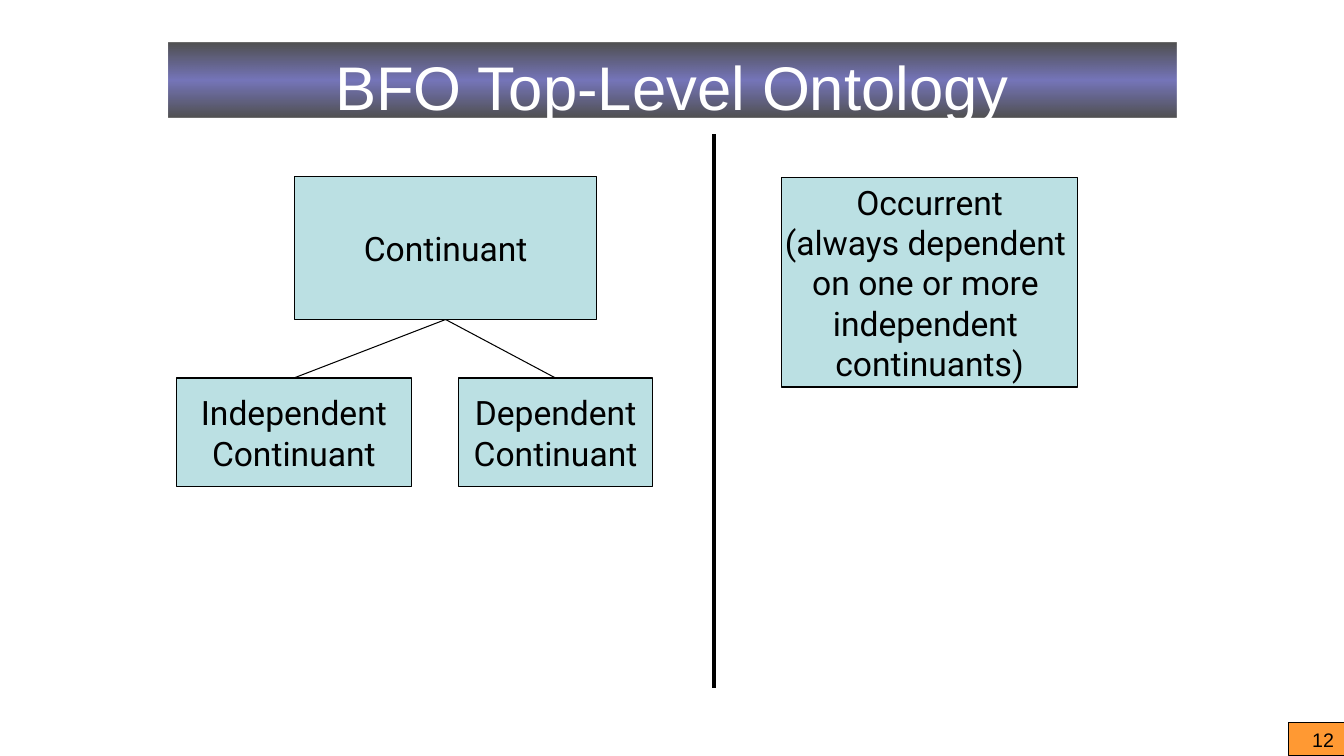
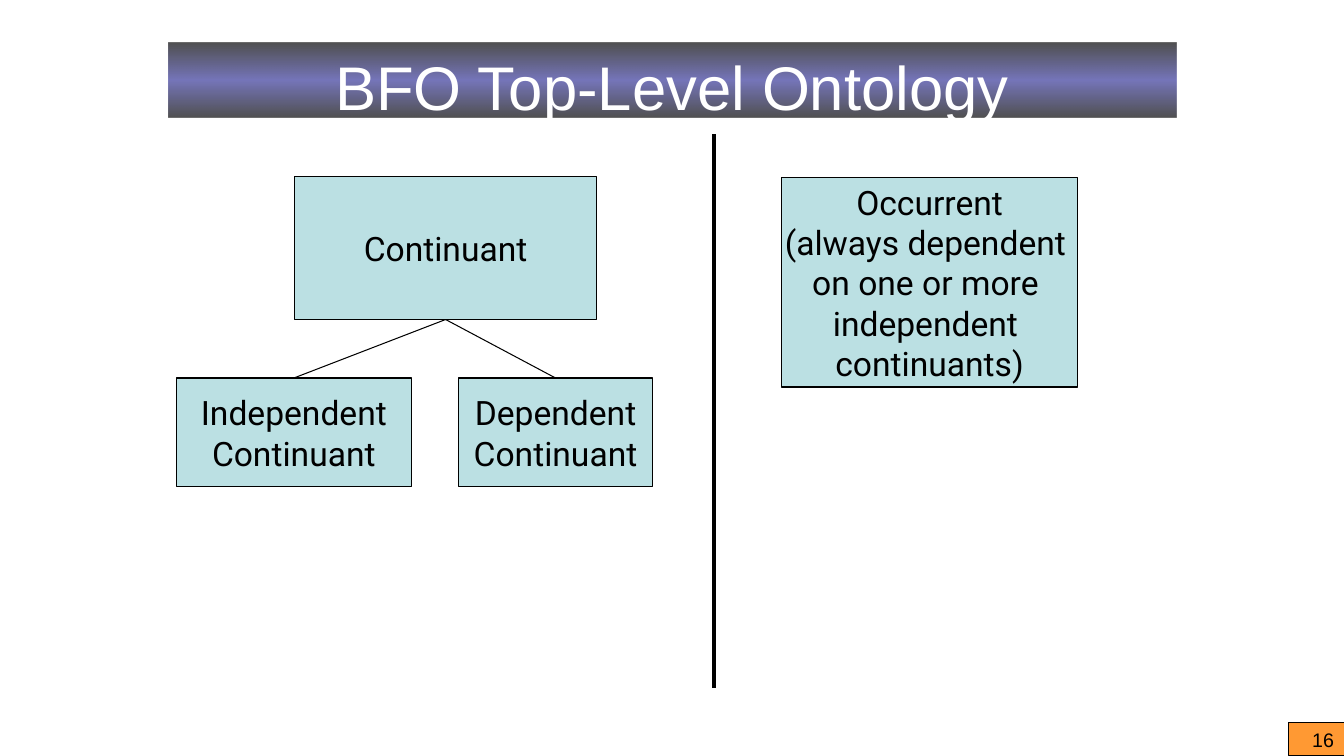
from lxml import etree
from pptx import Presentation
from pptx.dml.color import RGBColor
from pptx.enum import shapes, text
from pptx.oxml import ns
from pptx.util import Inches, Pt

BLACK = RGBColor(0x00, 0x00, 0x00)
WHITE = RGBColor(0xFF, 0xFF, 0xFF)
INDIGO = RGBColor(0x33, 0x33, 0x99)
PALE_TEAL = RGBColor(0xBB, 0xE0, 0xE3)
ORANGE = RGBColor(0xFF, 0x99, 0x33)

# position in percent, colour, opacity in percent
BAND_STOPS = [(0, BLACK, 68), (50, INDIGO, 67), (100, BLACK, 68)]
TITLE_FONT = {"name": "Arial", "size": Pt(44)}
NODE_FONT = {"name": "Roboto", "size": Pt(24)}
NUMBER_FONT = {"name": "Arial", "size": Pt(14)}

TOP, BOTTOM = 0, 2


class OntologyDeck:
    """Holds the shared style and the slide being built."""

    def __init__(self):
        self.deck = Presentation()
        self.deck.slide_width, self.deck.slide_height = Inches(13.33), Inches(7.5)
        self.page = None

    def add_page(self, title, number):
        self.page = self.deck.slides.add_slide(self.deck.slide_layouts[6])
        self.rectangle(12.78, 7.17, 0.56, 0.33, ORANGE)
        self.title_band(title)
        self.page_number(number)

    def rectangle(self, left, top, width, height, fill=None):
        """Outlined when a fill colour is given, otherwise bare."""
        box = self.page.shapes.add_shape(
            shapes.MSO_SHAPE.RECTANGLE, *map(Inches, (left, top, width, height)))
        box.shadow.inherit = False
        if fill is None:
            box.line.fill.background()
        else:
            box.fill.solid()
            box.fill.fore_color.rgb = fill
            box.line.color.rgb = BLACK
            box.line.width = Pt(0.75)
        return box

    def set_lines(self, box, lines, font, color=BLACK, align=text.PP_ALIGN.CENTER,
                  **frame_format):
        frame = box.text_frame
        for name, value in frame_format.items():
            setattr(frame, name, value)
        for index, line in enumerate(lines):
            para = frame.add_paragraph() if index else frame.paragraphs[0]
            para.alignment = align
            span = para.add_run()
            span.text = line
            for name, value in font.items():
                setattr(span.font, name, value)
            span.font.color.rgb = color

    def title_band(self, title):
        band = self.rectangle(1.67, 0.42, 10, 0.75)
        band.fill.gradient()
        band.fill.gradient_angle = 270
        stops = band._element.spPr.find(ns.qn("a:gradFill")).find(ns.qn("a:gsLst"))
        for stop in list(stops):
            stops.remove(stop)
        for position, color, opacity in BAND_STOPS:
            stop = etree.SubElement(stops, ns.qn("a:gs"), pos=str(position * 1000))
            shade = etree.SubElement(stop, ns.qn("a:srgbClr"), val=str(color))
            etree.SubElement(shade, ns.qn("a:alpha"), val=str(opacity * 1000))
        self.set_lines(band, [title], TITLE_FONT, WHITE, word_wrap=True,
                       vertical_anchor=text.MSO_ANCHOR.TOP,
                       margin_top=Inches(0.07), margin_bottom=0)

    def page_number(self, number):
        box = self.page.shapes.add_textbox(*map(Inches, (11, 7.17, 2.33, 0.33)))
        self.set_lines(box, [str(number)], NUMBER_FONT, align=text.PP_ALIGN.RIGHT,
                       word_wrap=True)

    def node(self, left, top, width, height, *lines):
        box = self.rectangle(left, top, width, height, PALE_TEAL)
        self.set_lines(box, lines, NODE_FONT, word_wrap=False,
                       vertical_anchor=text.MSO_ANCHOR.MIDDLE)
        return box

    def line(self, start=(0, 0), end=(0, 0), width=0.75):
        link = self.page.shapes.add_connector(
            shapes.MSO_CONNECTOR.STRAIGHT, *map(Inches, (*start, *end)))
        link.line.color.rgb = BLACK
        link.line.width = Pt(width)
        etree.SubElement(link._element.spPr, ns.qn("a:effectLst"))
        return link

    def branch(self, parent, child):
        link = self.line()
        link.begin_connect(parent, BOTTOM)
        link.end_connect(child, TOP)


def add_top_level(ontology, number):
    ontology.add_page("BFO Top-Level Ontology", number)
    continuant = ontology.node(2.92, 1.75, 3, 1.42, "Continuant")
    ontology.node(7.75, 1.76, 2.94, 2.08, "Occurrent", "(always dependent ",
                  "on one or more ", "independent ", "continuants)")
    for left, width, kind in [(1.75, 2.33, "Independent"), (4.55, 1.92, "Dependent")]:
        child = ontology.node(left, 3.75, width, 1.08, kind, "Continuant")
        ontology.branch(continuant, child)
    ontology.line((7.08, 1.33), (7.08, 6.83), width=3)


def main():
    ontology = OntologyDeck()
    for number in (12, 16):
        add_top_level(ontology, number)
    ontology.deck.save("out.pptx")


if __name__ == "__main__":
    main()
